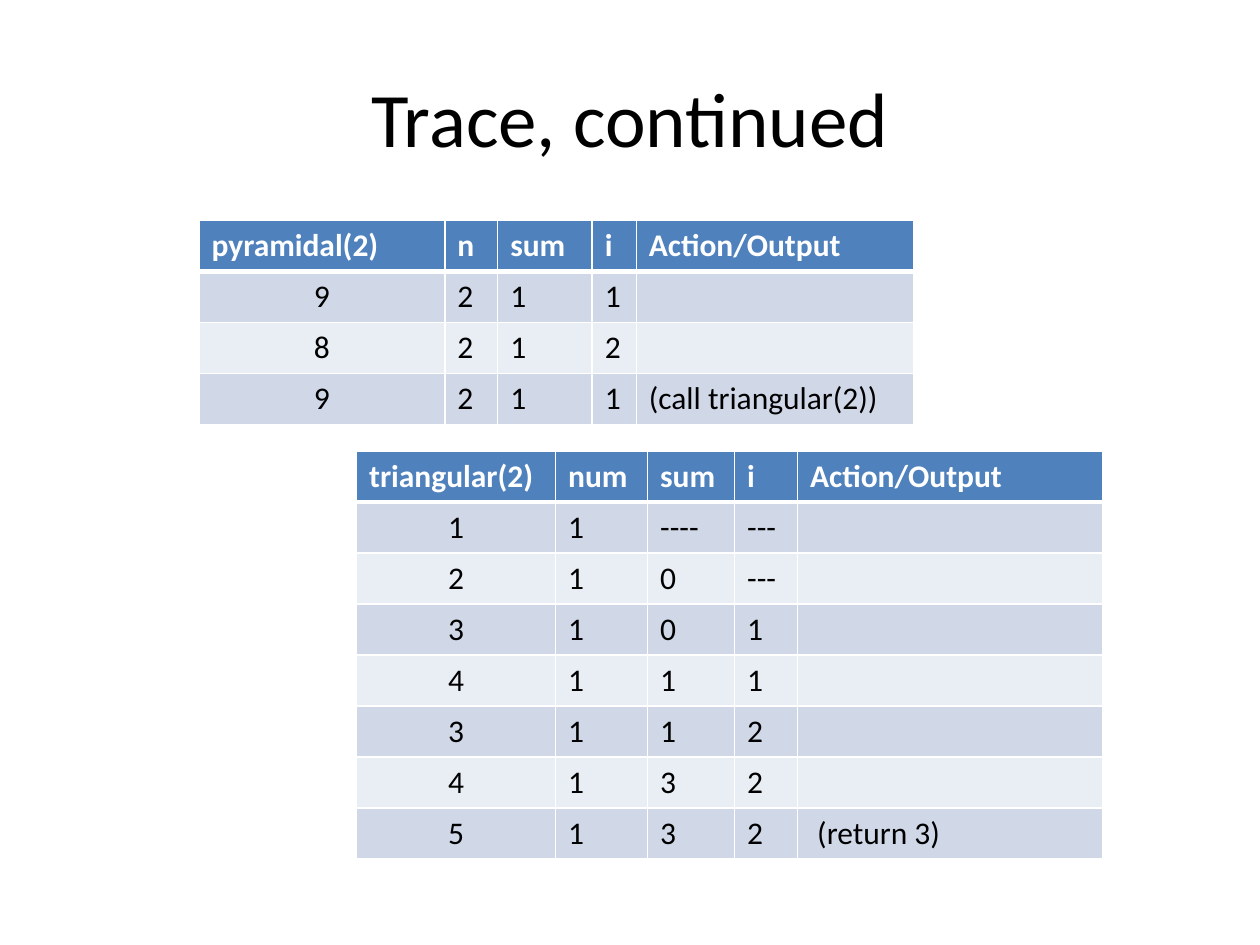
from lxml import etree
from pptx import Presentation
from pptx.dml.color import RGBColor
from pptx.enum import text
from pptx.oxml import ns
from pptx.util import Inches, Pt

COLORS = {"ink": "000000", "paper": "FFFFFF", "header": "4F81BD",
          "odd": "D0D8E8", "even": "E9EDF4"}
WIDTH, HEIGHT = 10, 7.5
ROW = 0.405


def write(frame, words, size=18, color="ink", bold=False, align=text.PP_ALIGN.LEFT):
    para = frame.paragraphs[0]
    para.alignment = align
    span = para.add_run()
    span.text = words
    span.font.name = "Calibri"
    span.font.size = Pt(size)
    span.font.bold = bold
    span.font.color.rgb = RGBColor.from_string(COLORS[color])


def rule_cell(cell, top=1, bottom=1):
    """Draw the white rules around a cell, widths in points."""
    properties = cell._tc.get_or_add_tcPr()
    for side, width in (("L", 1), ("R", 1), ("T", top), ("B", bottom)):
        line = etree.SubElement(properties, ns.qn(f"a:ln{side}"), w=str(Pt(width)))
        fill = etree.SubElement(line, ns.qn("a:solidFill"))
        etree.SubElement(fill, ns.qn("a:srgbClr"), val=COLORS["paper"])


deck = Presentation()
deck.slide_width, deck.slide_height = Inches(WIDTH), Inches(HEIGHT)
page = deck.slides.add_slide(deck.slide_layouts[6])

title = page.shapes.add_textbox(Inches(0.05 * WIDTH), Inches(0.04 * HEIGHT),
                                Inches(0.9 * WIDTH), Inches(1.25))
title.text_frame.word_wrap = True
title.text_frame.vertical_anchor = text.MSO_ANCHOR.MIDDLE
write(title.text_frame, "Trace, continued", size=44, align=text.PP_ALIGN.CENTER)

# Each trace: left, top, column widths, rows with the header first
traces = [
    (1.58, 1.75, [1.95, 0.42, 0.75, 0.35, 2.2], [
        ["pyramidal(2)", "n", "sum", "i", "Action/Output"],
        ["9", "2", "1", "1", ""],
        ["8", "2", "1", "2", ""],
        ["9", "2", "1", "1", "(call triangular(2))"],
    ]),
    (2.83, 3.58, [1.58, 0.73, 0.69, 0.5, 2.42], [
        ["triangular(2)", "num", "sum", "i", "Action/Output"],
        ["1", "1", "----", "---", ""],
        ["2", "1", "0", "---", ""],
        ["3", "1", "0", "1", ""],
        ["4", "1", "1", "1", ""],
        ["3", "1", "1", "2", ""],
        ["4", "1", "3", "2", ""],
        ["5", "1", "3", "2", " (return 3)"],
    ]),
]

for left, top, widths, rows in traces:
    table = page.shapes.add_table(len(rows), len(widths), Inches(left), Inches(top),
                                  Inches(sum(widths)), Inches(ROW * len(rows))).table
    for column, width in zip(table.columns, widths):
        column.width = Inches(width)
    for r, values in enumerate(rows):
        table.rows[r].height = Inches(ROW)
        header = r == 0
        shade = "header" if header else "odd" if r % 2 else "even"
        for c, value in enumerate(values):
            cell = table.cell(r, c)
            rule_cell(cell, top=3 if r == 1 else 1, bottom=3 if header else 1)
            cell.fill.solid()
            cell.fill.fore_color.rgb = RGBColor.from_string(COLORS[shade])
            if value:
                centred = c == 0 and not header
                write(cell.text_frame, value, color="paper" if header else "ink", bold=header,
                      align=text.PP_ALIGN.CENTER if centred else text.PP_ALIGN.LEFT)

deck.save("out.pptx")
